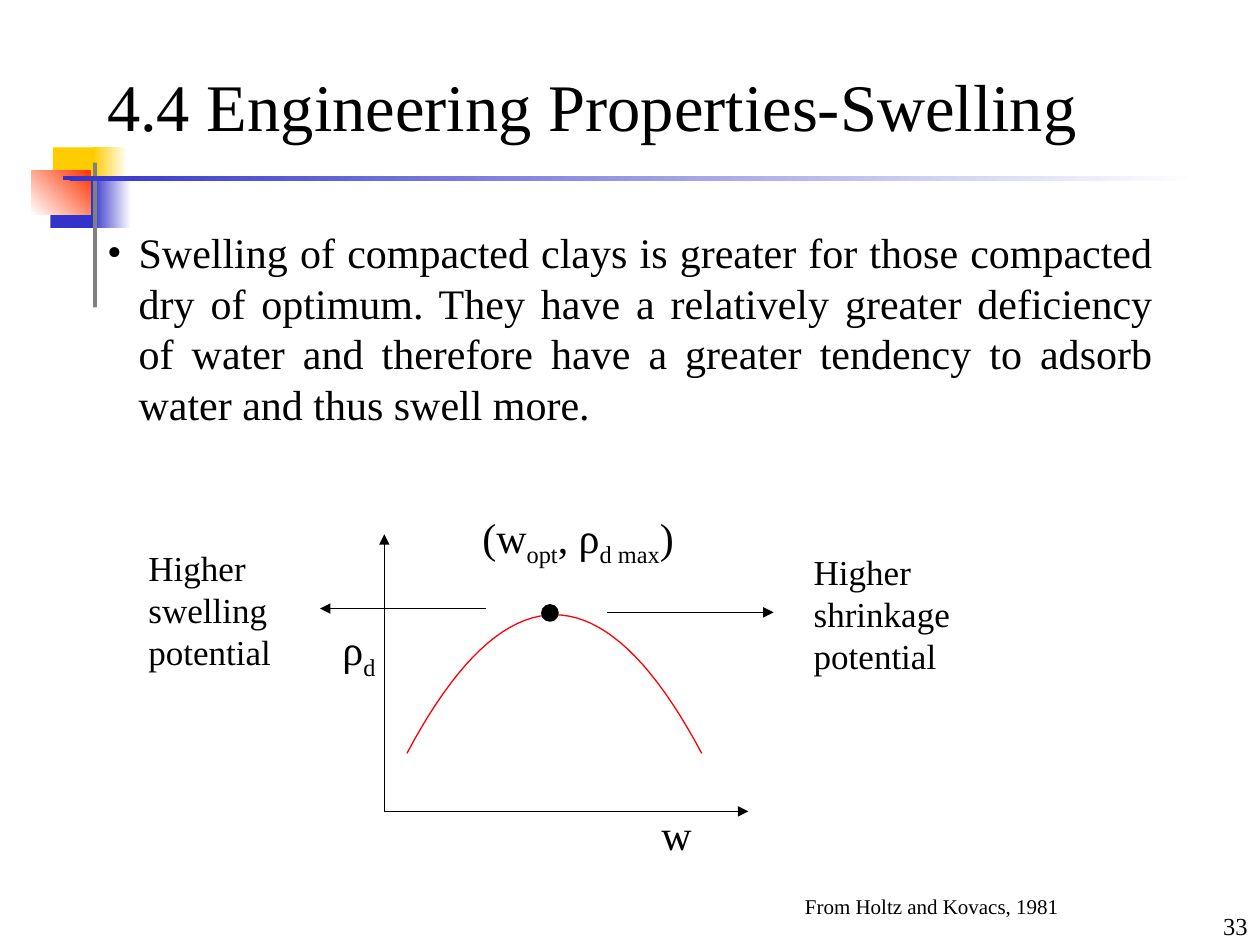
from dataclasses import dataclass
from lxml.etree import SubElement
from pptx import Presentation
from pptx.dml.color import RGBColor as RGB
from pptx.enum.shapes import MSO_CONNECTOR as Conn, MSO_SHAPE as Kind
from pptx.enum.text import MSO_ANCHOR as Anchor, MSO_AUTO_SIZE as Fit, PP_ALIGN as Align
from pptx.oxml.ns import qn
from pptx.util import Inches, Pt


@dataclass(frozen=True)
class Theme:
    font: str = "Times New Roman"
    ink: str = "000000"
    paper: str = "FFFFFF"
    gold: str = "FFCC00"
    blue: str = "3333CC"
    red: str = "FF3300"
    gray: str = "808080"
    curve: str = "FF0000"
    head: int = 38
    body: int = 24
    label: int = 20
    page: int = 14
    cite: int = 12
    line: float = 0.75


T = Theme()


def style(font, size):
    font.name, font.size = T.font, Pt(size)
    font.color.rgb = RGB.from_string(T.ink)


def place(shape, left, top, width, height):
    shape.left, shape.top = Inches(left), Inches(top)
    shape.width, shape.height = Inches(width), Inches(height)


def block(slide, box, color, end=None, angle=0, kind=Kind.RECTANGLE):
    """Solid shape, or one fading to end at a clockwise angle."""
    shape = slide.shapes.add_shape(kind, *map(Inches, box))
    shape.shadow.inherit = False
    shape.line.fill.background()
    if end is None:
        shape.fill.solid()
        shape.fill.fore_color.rgb = RGB.from_string(color)
    else:
        shape.fill.gradient()
        shape.fill.gradient_angle = (360 - angle) % 360
        for stop, tone, spot in zip(shape.fill.gradient_stops, (color, end), (0, 1)):
            stop.color.rgb = RGB.from_string(tone)
            stop.position = spot
    return shape


def label(slide, box, parts, size, align=Align.LEFT, fit=Fit.SHAPE_TO_FIT_TEXT):
    """Text box; every second part is a subscript."""
    frame = slide.shapes.add_textbox(*map(Inches, box)).text_frame
    frame.word_wrap = True
    frame.auto_size = fit
    para = frame.paragraphs[0]
    para.alignment = align
    for i, part in enumerate(parts):
        run = para.add_run()
        run.text = part
        style(run.font, size)
        if i % 2:
            run._r.get_or_add_rPr().set("baseline", "-25000")


def arrow(slide, x1, y1, x2, y2):
    link = slide.shapes.add_connector(Conn.STRAIGHT, *map(Inches, (x1, y1, x2, y2)))
    link.line.color.rgb = RGB.from_string(T.ink)
    link.line.width = Pt(T.line)
    SubElement(link.line._get_or_add_ln(), qn("a:tailEnd"), type="triangle")
    SubElement(link._element.spPr, qn("a:effectLst"))


def motif(slide, x, y):
    """Coloured squares, upright bar and fading rule."""
    block(slide, (x + 0.17, y, 0.37, 0.4), T.gold)
    block(slide, (x + 0.49, y, 0.27, 0.4), T.gold, T.paper)
    block(slide, (x + 0.15, y + 0.24, 0.35, 0.4), T.blue)
    block(slide, (x + 0.48, y + 0.24, 0.31, 0.4), T.blue, T.paper)
    block(slide, (x, y + 0.18, 0.47, 0.35), T.paper, T.red, 315)
    block(slide, (x + 0.49, y + 0.12, 0.03, 1.15), T.gray)
    block(slide, (x + 0.25, y + 0.23, 9, 0.03), T.blue, T.paper, 45)


def heading(slide, box, text):
    title = slide.shapes.title
    place(title, *box)
    frame = title.text_frame
    frame.text = text
    frame.vertical_anchor = Anchor.MIDDLE
    frame.auto_size = Fit.NONE
    para = frame.paragraphs[0]
    para.alignment = Align.LEFT
    style(para.runs[0].font, T.head)


def content(slide, box, text):
    body = slide.placeholders[1]
    place(body, *box)
    frame = body.text_frame
    frame.text = text
    frame.auto_size = Fit.NONE
    para = frame.paragraphs[0]
    para.alignment = Align.JUSTIFY
    para.space_before = Pt(0)
    # Hanging bullet
    props = para._p.get_or_add_pPr()
    props.set("marL", str(Inches(0.25)))
    props.set("indent", str(Inches(-0.25)))
    tint = SubElement(props, qn("a:buClr"))
    SubElement(tint, qn("a:srgbClr"), val=T.ink)
    SubElement(props, qn("a:buFont"), typeface=T.font)
    SubElement(props, qn("a:buChar"), char="•")
    style(para.runs[0].font, T.body)


def curve(slide, x, y, half, drop, steps=40):
    """Parabola falling by drop on both sides of its peak."""
    spots = [2 * i / steps - 1 for i in range(steps + 1)]
    points = [(Inches(x + half * s), Inches(y + drop * s * s)) for s in spots]
    path = slide.shapes.build_freeform(*points[0])
    path.add_line_segments(points[1:], close=False)
    shape = path.convert_to_shape()
    shape.shadow.inherit = False
    shape.fill.background()
    shape.line.color.rgb = RGB.from_string(T.curve)
    shape.line.width = Pt(T.line)


def diagram(slide, x, y):
    """Compaction curve; x is the upright axis, y the top of the peak label."""
    # Axes
    base = y + 2.43
    arrow(slide, x, base, x, y + 0.23)
    arrow(slide, x, base, x + 2.89, base)
    label(slide, (x + 2.1, y + 2.36, 0.6, 0.5), ["w"], T.body)
    label(slide, (x - 0.43, y + 0.89, 0.54, 0.5), ["ρ", "d"], T.body)
    # Curve and peak
    label(slide, (x + 0.68, y, 2.24, 0.5), ["(w", "opt", ", ρ", "d max", ")"], T.body)
    curve(slide, x + 1.35, y + 0.87, 1.17, 1.1)
    dot = block(slide, (x + 1.25, y + 0.79, 0.13, 0.13), T.ink, kind=Kind.OVAL)
    dot.line.color.rgb = RGB.from_string(T.ink)
    dot.line.width = Pt(T.line)
    # Trends on each side
    arrow(slide, x + 0.81, y + 0.82, x - 0.51, y + 0.82)
    label(slide, (x - 1.97, y + 0.28, 1.4, 1.1), ["Higher swelling potential"], T.label)
    arrow(slide, x + 1.77, y + 0.85, x + 3.09, y + 0.85)
    label(slide, (x + 3.31, y + 0.31, 1.4, 1.1), ["Higher shrinkage potential"], T.label)


def main():
    deck = Presentation()
    deck.slide_width, deck.slide_height = Inches(10), Inches(7.5)
    # Title and body layout
    slide = deck.slides.add_slide(deck.slide_layouts[1])
    motif(slide, 0.25, 1.17)
    heading(slide, (0.75, 0.33, 8.5, 1), "4.4 Engineering Properties-Swelling")
    content(slide, (0.75, 1.75, 8.5, 5.5),
            "Swelling of compacted clays is greater for those compacted dry of optimum. "
            "They have a relatively greater deficiency of water and therefore have a "
            "greater tendency to adsorb water and thus swell more.")
    diagram(slide, 3.05, 4.01)
    # Source and page number
    label(slide, (6.29, 7.04, 2.43, 0.3), ["From Holtz and Kovacs, 1981"], T.cite)
    label(slide, (9.38, 7.18, 0.62, 0.32), ["33"], T.page, Align.RIGHT, Fit.NONE)
    deck.save("out.pptx")


if __name__ == "__main__":
    main()
